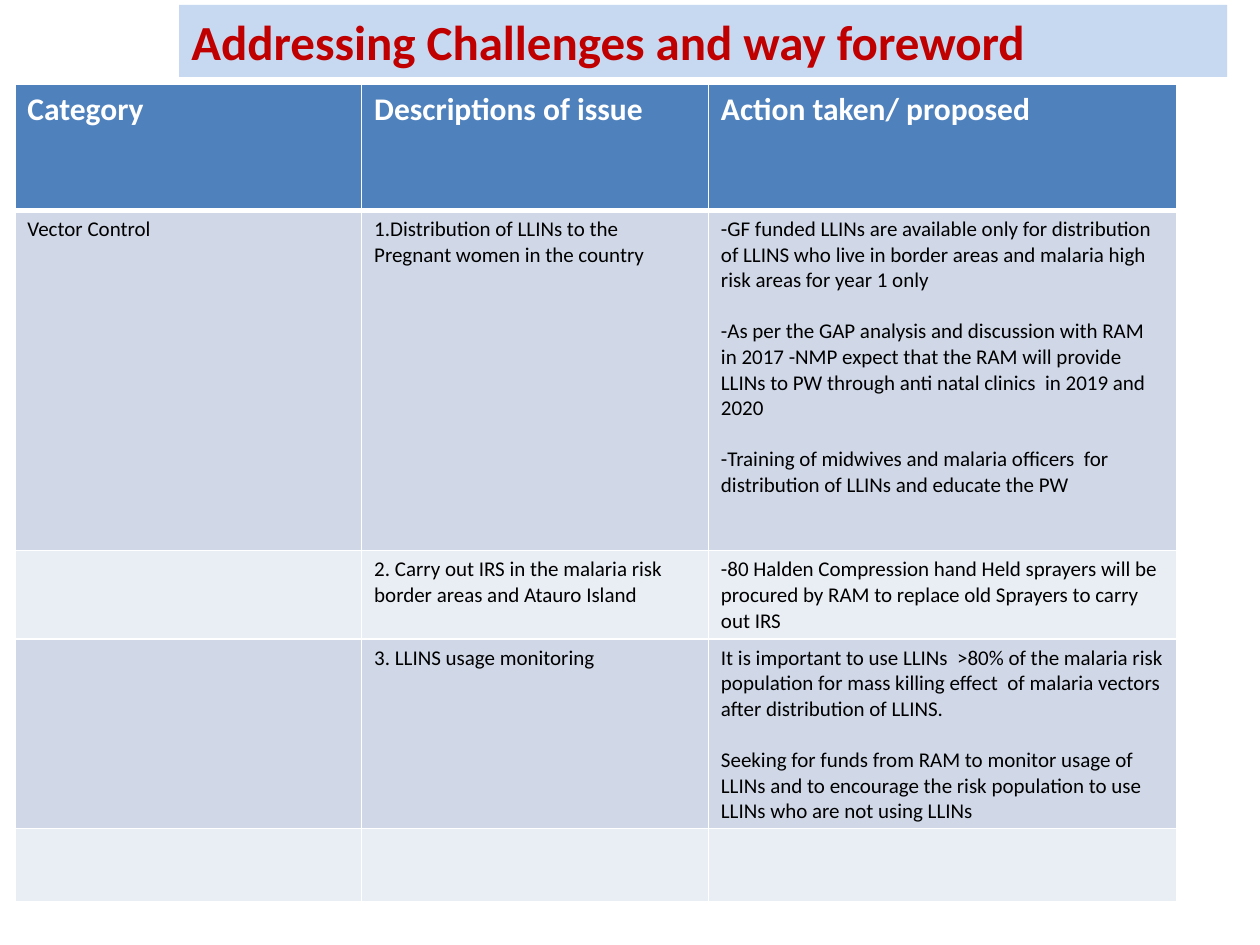
from pptx import Presentation
from pptx.dml.color import RGBColor
from pptx.enum.shapes import MSO_SHAPE as Shape
from pptx.enum.text import MSO_ANCHOR as Anchor, MSO_AUTO_SIZE as Fit, PP_ALIGN as Align
from pptx.oxml import parse_xml
from pptx.oxml.ns import nsdecls
from pptx.util import Cm, Pt

TITLE = "Addressing Challenges and way foreword"
HEADS = ["Category", "Descriptions of issue", "Action taken/ proposed"]
# Each cell is a list of paragraphs
ROWS = [
    [
        ["Vector Control"],
        ["1.Distribution of LLINs to the Pregnant women in the country"],
        [
            "-GF funded LLINs are available only for distribution of LLINS who live "
            "in border areas and malaria high risk areas for year 1 only",
            "-As per the GAP analysis and discussion with RAM in 2017 -NMP expect that "
            "the RAM will provide LLINs to PW through anti natal clinics  in 2019 and 2020",
            "-Training of midwives and malaria officers  for distribution of LLINs "
            "and educate the PW",
        ],
    ],
    [
        [],
        ["2. Carry out IRS in the malaria risk border areas and Atauro Island"],
        ["-80 Halden Compression hand Held sprayers will be procured by RAM "
         "to replace old Sprayers to carry out IRS"],
    ],
    [
        [],
        ["3. LLINS usage monitoring"],
        [
            "It is important to use LLINs  >80% of the malaria risk population for mass "
            "killing effect  of malaria vectors after distribution of LLINS.",
            "Seeking for funds from RAM to monitor usage of LLINs and to encourage "
            "the risk population to use LLINs who are not using LLINs",
        ],
    ],
    [[], [], []],
]
WIDTHS = [6.99, 6.99, 9.45]
HEIGHTS = [2.54, 6.86, 1.78, 3.81, 1.47]
BANDS = ["D0D8E8", "E9EDF4"]


def color(code):
    return RGBColor.from_string(code)


def write(frame, *lines, size=12, ink="000000", bold=False, gap=0):
    """Fill a text frame, one paragraph per line, with a gap between them."""
    frame.word_wrap = True
    for i, line in enumerate(lines):
        para = frame.add_paragraph() if i else frame.paragraphs[0]
        para.alignment = Align.LEFT
        para.space_before = Pt(gap if i else 0)
        run = para.add_run()
        run.text = line
        font = run.font
        font.name, font.size, font.bold = "Calibri", Pt(size), bold
        font.color.rgb = color(ink)


class Page:
    edge = "FFFFFF"
    head = "4F81BD"

    def __init__(self, slide):
        self.slide = slide

    def banner(self, text, left, top, width, height, fill, **style):
        box = self.slide.shapes.add_shape(
            Shape.RECTANGLE, Cm(left), Cm(top), Cm(width), Cm(height))
        box.shadow.inherit = False
        box.fill.solid()
        box.fill.fore_color.rgb = color(fill)
        box.line.fill.background()
        frame = box.text_frame
        frame.vertical_anchor = Anchor.TOP
        write(frame, text, **style)
        frame.auto_size = Fit.SHAPE_TO_FIT_TEXT

    def cell(self, cell, lines, fill, base=1, **style):
        # Borders come before the fill in the cell properties
        props = cell._tc.get_or_add_tcPr()
        for side in "LRTB":
            wide = Pt(base if side == "B" else 1)
            props.append(parse_xml(
                f'<a:ln{side} {nsdecls("a")} w="{wide}"><a:solidFill>'
                f'<a:srgbClr val="{self.edge}"/></a:solidFill></a:ln{side}>'))
        cell.fill.solid()
        cell.fill.fore_color.rgb = color(fill)
        write(cell.text_frame, *lines, **style)

    def table(self, left, top, heads, rows, widths, heights):
        grid = self.slide.shapes.add_table(
            len(heights), len(widths), Cm(left), Cm(top),
            Cm(sum(widths)), Cm(sum(heights))).table
        for col, width in zip(grid.columns, widths):
            col.width = Cm(width)
        for row, height in zip(grid.rows, heights):
            row.height = Cm(height)
        for c, text in enumerate(heads):
            self.cell(grid.cell(0, c), [text], self.head, base=3,
                      size=18, ink="FFFFFF", bold=True)
        for r, row in enumerate(rows):
            for c, lines in enumerate(row):
                self.cell(grid.cell(r + 1, c), lines, BANDS[r % 2], gap=14.6)


def main():
    deck = Presentation()
    deck.slide_width, deck.slide_height = Cm(25.4), Cm(19.05)
    page = Page(deck.slides.add_slide(deck.slide_layouts[6]))

    # Title bar
    page.banner(TITLE, 3.61, 0.1, 21.13, 1.45, "C6D9F1",
                size=28, ink="C00000", bold=True)

    # Issues and actions
    page.table(0.3, 1.7, HEADS, ROWS, WIDTHS, HEIGHTS)

    deck.save("out.pptx")


if __name__ == "__main__":
    main()
